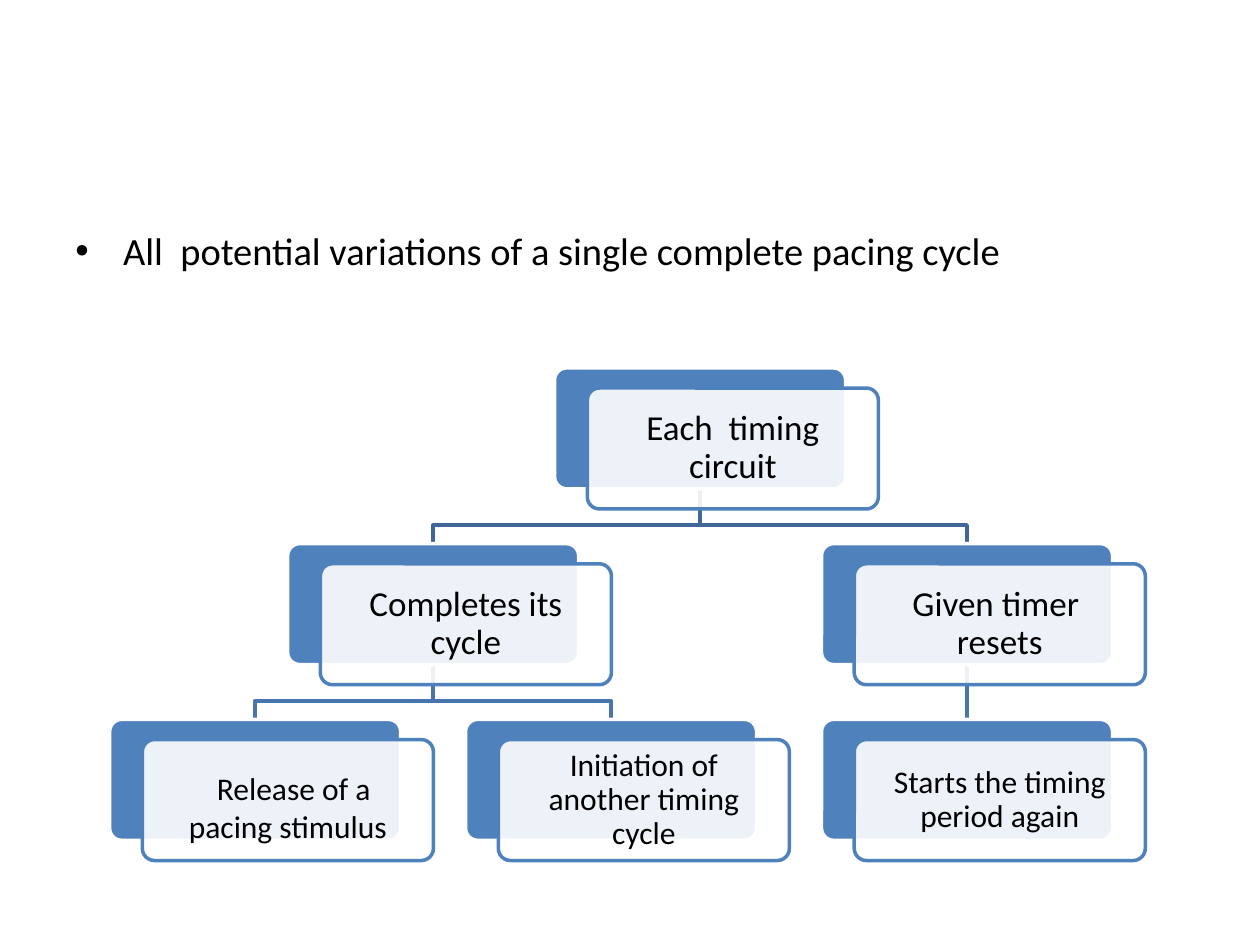
from lxml.etree import SubElement
from pptx import Presentation
from pptx.dml.color import RGBColor
from pptx.enum.shapes import MSO_CONNECTOR, MSO_SHAPE
from pptx.enum.text import MSO_ANCHOR, PP_ALIGN
from pptx.oxml.ns import qn
from pptx.util import Inches, Pt

BLACK = RGBColor(0x00, 0x00, 0x00)
WHITE = RGBColor(0xFF, 0xFF, 0xFF)
BLUE = RGBColor(0x4F, 0x81, 0xBD)
BRANCH_COLORS = [RGBColor(0x3F, 0x67, 0x97), RGBColor(0x48, 0x75, 0xAC)]

FONT = "Calibri"
CARD_W, CARD_H = 2.31, 0.96
OFFSET_X, OFFSET_Y = 0.26, 0.16  # front card relative to its backing
BEND = 0.66  # share of the level gap above the crossbar

# Each node: runs of (text, size), children
TREE = ([("Each  timing circuit", 20)], [
    ([("Completes its cycle", 20)], [
        ([(" ", 30), ("Release of a pacing stimulus", 18)], []),
        ([("Initiation of another timing cycle", 18)], []),
    ]),
    ([("Given timer  resets", 20)], [
        ([("Starts the timing period again", 18)], []),
    ]),
])


def add_text(tf, runs, align=PP_ALIGN.LEFT, anchor=MSO_ANCHOR.TOP, inset=None,
             line_spacing=None, before=0, after=0):
    """Fill the first paragraph with (text, size) runs and return it."""
    tf.word_wrap = True
    tf.vertical_anchor = anchor
    if inset is not None:
        tf.margin_left = tf.margin_right = Inches(inset)
        tf.margin_top = tf.margin_bottom = Inches(inset)
    p = tf.paragraphs[0]
    p.alignment = align
    p.line_spacing = line_spacing
    p.space_before, p.space_after = Pt(before), Pt(after)
    for text, size in runs:
        r = p.add_run()
        r.text = text
        r.font.name, r.font.size = FONT, Pt(size)
        r.font.color.rgb = BLACK
    return p


def add_bullet_text(s, x, y, w, h, text):
    sp = s.shapes.add_textbox(Inches(x), Inches(y), Inches(w), Inches(h))
    p = add_text(sp.text_frame, [(text, 22)], before=4.4)
    pPr = p._p.get_or_add_pPr()
    pPr.set("marL", str(Inches(0.38)))
    pPr.set("indent", str(-Inches(0.38)))
    SubElement(pPr, qn("a:buFont")).set("typeface", "Arial")
    SubElement(pPr, qn("a:buChar")).set("char", "•")


def add_round_rect(s, x, y, fill, line, opacity=1):
    sp = s.shapes.add_shape(MSO_SHAPE.ROUNDED_RECTANGLE, Inches(x), Inches(y),
                            Inches(CARD_W), Inches(CARD_H))
    sp.adjustments[0] = 0.1
    sp.shadow.inherit = False
    sp.fill.solid()
    sp.fill.fore_color.rgb = fill
    sp.line.color.rgb = line
    sp.line.width = Pt(2)
    if opacity < 1:
        clr = sp._element.spPr.find(qn("a:solidFill"))[0]
        SubElement(clr, qn("a:alpha")).set("val", str(int(opacity * 100000)))
    return sp


def add_card(s, x, y, runs):
    """Draw a backing with a text card over it; return the backing."""
    backing = add_round_rect(s, x, y, BLUE, WHITE)
    front = add_round_rect(s, x + OFFSET_X, y + OFFSET_Y, WHITE, BLUE, 0.9)
    add_text(front.text_frame, runs, PP_ALIGN.CENTER, MSO_ANCHOR.MIDDLE, 0.18,
             line_spacing=0.9, after=0.35 * runs[-1][1])
    return backing


def add_branch(s, parent, child, color):
    """Join two backings by a line behind all the cards."""
    x1, y1 = parent.left + parent.width // 2, parent.top + parent.height
    x2, y2 = child.left + child.width // 2, child.top
    if abs(x1 - x2) < Inches(0.01):
        sp = s.shapes.add_connector(MSO_CONNECTOR.STRAIGHT, x1, y1, x2, y2)
        sp.begin_connect(parent, 2)
        sp.end_connect(child, 0)
    else:
        bar = y1 + int((y2 - y1) * BEND)
        path = s.shapes.build_freeform(x1, y1)
        path.add_line_segments([(x1, bar), (x2, bar), (x2, y2)], close=False)
        sp = path.convert_to_shape()
        sp.fill.background()
    sp.line.color.rgb = color
    sp.line.width = Pt(2)
    SubElement(sp._element.spPr, qn("a:effectLst"))
    s.shapes._spTree.insert(2, sp._element)


def count_leaves(node):
    return sum(map(count_leaves, node[1])) or 1


def add_tree(s, node, x, y, col, row, level=0):
    """Draw a subtree from its leftmost column; centre parents over children."""
    runs, children = node
    backings, child_x = [], x
    for child in children:
        backings.append(add_tree(s, child, child_x, y + row, col, row, level + 1))
        child_x += col * count_leaves(child)
    if backings:
        x = (backings[0].left + backings[-1].left) / 2 / Inches(1)
    card = add_card(s, x, y, runs)
    for backing in backings:
        add_branch(s, card, backing, BRANCH_COLORS[level])
    return card


def add_hierarchy(s, x, y, w, h):
    """Fit three columns and three levels of cards into the box."""
    col = (w - OFFSET_X - CARD_W) / 2
    row = (h - OFFSET_Y - CARD_H) / 2
    add_tree(s, TREE, x, y, col, row)


def main():
    prs = Presentation()
    prs.slide_width, prs.slide_height = Inches(10), Inches(7.5)
    s = prs.slides.add_slide(prs.slide_layouts[6])
    add_bullet_text(s, 0.5, 1.75, 9, 4.95,
                    "All  potential variations of a single complete pacing cycle")
    add_hierarchy(s, 0.87, 2.92, 8.22, 3.91)
    prs.save("out.pptx")


if __name__ == "__main__":
    main()
